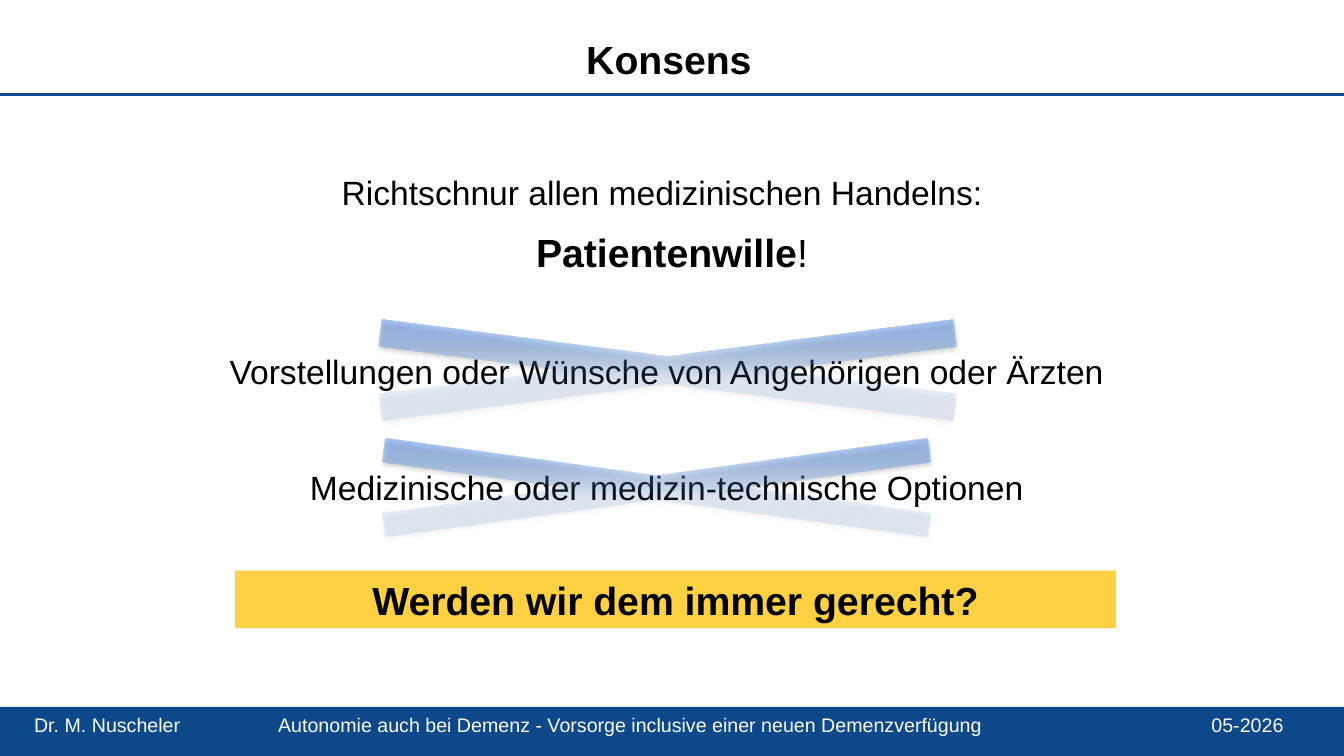
from dataclasses import dataclass

from lxml.etree import SubElement
from pptx import Presentation
from pptx.dml.color import RGBColor
from pptx.enum.shapes import MSO_CONNECTOR, MSO_SHAPE
from pptx.enum.text import MSO_ANCHOR, PP_ALIGN
from pptx.oxml import parse_xml
from pptx.oxml.ns import nsdecls, qn
from pptx.util import Cm, Pt

BLUE = RGBColor(0x0C, 0x48, 0x8A)
YELLOW = RGBColor(0xFF, 0xC0, 0x00)
WHITE = RGBColor(0xFF, 0xFF, 0xFF)
BLACK = RGBColor(0, 0, 0)
CROSS_DARK = RGBColor(0x3F, 0x80, 0xCE)
CROSS_LIGHT = RGBColor(0xA4, 0xC4, 0xFF)
FONT = "Arial"
WIDTH, HEIGHT = 33.87, 19.05


@dataclass
class Box:
    """Position and size in centimetres."""
    left: float
    top: float
    width: float
    height: float

    def lengths(self) -> tuple:
        return Cm(self.left), Cm(self.top), Cm(self.width), Cm(self.height)


@dataclass
class Cross:
    box: Box
    thickness: float


@dataclass
class Line:
    text: str
    size: int = 24
    bold: bool = False
    before: float = 6
    tail: str = ""


CROSSES = [
    Cross(Box(2.92, 7.52, 27.81, 3.61), 0.193),
    Cross(Box(3.35, 10.49, 26.39, 3.58), 0.17),
]
GAP = 48
BODY = [
    Line("Richtschnur allen medizinischen Handelns: ", before=0),
    Line(" Patientenwille", size=28, bold=True, tail="!"),
    Line("Vorstellungen oder Wünsche von Angehörigen oder Ärzten", before=GAP),
    Line("Medizinische oder medizin-technische Optionen", before=GAP),
]
FOOTER = ["Dr. M. Nuscheler",
          "Autonomie auch bei Demenz - Vorsorge inclusive einer neuen Demenzverfügung",
          "05-2026"]
FOOTER_TABS = [6.15, 29.67]


def add_text(p, text: str, *, size: float, bold: bool = False,
             color: RGBColor = BLACK) -> None:
    r = p.add_run()
    r.text = text
    r.font.name = FONT
    r.font.size = Pt(size)
    r.font.bold = bold
    r.font.color.rgb = color


def add_panel(s, box: Box, fill: RGBColor | None = None, inset: float = 0.3):
    """Add a plain rectangle, or a text box if there is no fill."""
    if fill is None:
        sp = s.shapes.add_textbox(*box.lengths())
    else:
        sp = s.shapes.add_shape(MSO_SHAPE.RECTANGLE, *box.lengths())
        sp.shadow.inherit = False
        sp.fill.solid()
        sp.fill.fore_color.rgb = fill
        sp.line.fill.background()
    tf = sp.text_frame
    tf.word_wrap = True
    tf.vertical_anchor = MSO_ANCHOR.TOP
    tf.margin_left, tf.margin_right = Cm(inset), Cm(0.3)
    tf.margin_top = tf.margin_bottom = Cm(0.15)
    return sp


def add_lines(sp, lines: list[Line]) -> None:
    tf = sp.text_frame
    for i, line in enumerate(lines):
        p = tf.add_paragraph() if i else tf.paragraphs[0]
        p.alignment = PP_ALIGN.CENTER
        p.space_before, p.space_after = Pt(line.before), Pt(6)
        add_text(p, line.text, size=line.size, bold=line.bold)
        if line.tail:
            add_text(p, line.tail, size=line.size)


def add_cross(s, cross: Cross) -> None:
    """Add a cross that fades towards its foot and casts a soft shadow."""
    sp = s.shapes.add_shape(MSO_SHAPE.MATH_MULTIPLY, *cross.box.lengths())
    sp.adjustments[0] = cross.thickness
    sp.line.fill.background()
    ln = sp.line._ln
    ln.addprevious(parse_xml(
        f'<a:gradFill {nsdecls("a")} rotWithShape="1"><a:gsLst>'
        f'<a:gs pos="45000"><a:srgbClr val="{CROSS_DARK}"><a:alpha val="13000"/></a:srgbClr></a:gs>'
        f'<a:gs pos="100000"><a:srgbClr val="{CROSS_LIGHT}"/></a:gs>'
        '</a:gsLst><a:lin ang="16200000" scaled="0"/></a:gradFill>'))
    ln.addnext(parse_xml(
        f'<a:effectLst {nsdecls("a")}>'
        f'<a:outerShdw blurRad="{Pt(3.1)}" dist="{Pt(1.8)}" dir="5400000" rotWithShape="0">'
        f'<a:srgbClr val="{BLACK}"><a:alpha val="35000"/></a:srgbClr>'
        '</a:outerShdw></a:effectLst>'))


def add_footer(s) -> None:
    sp = add_panel(s, Box(0, 17.81, WIDTH, 1.24), BLUE, inset=0.86)
    p = sp.text_frame.paragraphs[0]
    p.alignment = PP_ALIGN.LEFT
    tabs = SubElement(p._p.get_or_add_pPr(), qn("a:tabLst"))
    for tab in FOOTER_TABS:
        SubElement(tabs, qn("a:tab"), pos=str(Cm(tab)), algn="l")
    add_text(p, "\t".join(FOOTER), size=14, color=WHITE)


def add_rule(s, top: float) -> None:
    rule = s.shapes.add_connector(MSO_CONNECTOR.STRAIGHT, 0, Cm(top), Cm(WIDTH), Cm(top))
    rule.line.color.rgb = BLUE
    rule.line.width = Pt(2.25)
    SubElement(rule._element.spPr, qn("a:effectLst"))


def main() -> None:
    prs = Presentation()
    prs.slide_width, prs.slide_height = Cm(WIDTH), Cm(HEIGHT)
    s = prs.slides.add_slide(prs.slide_layouts[6])
    add_footer(s)
    add_rule(s, 2.39)
    title = add_panel(s, Box(7.52, 0.74, 18.95, 2.16))
    add_lines(title, [Line("Konsens ", size=28, bold=True, before=0)])
    add_lines(add_panel(s, Box(1.19, 4.17, 31.22, 10.21), WHITE), BODY)
    for cross in CROSSES:
        add_cross(s, cross)
    question = add_panel(s, Box(5.92, 14.38, 22.2, 1.45), YELLOW)
    color = question.fill._xPr.find(f'{qn("a:solidFill")}/{qn("a:srgbClr")}')
    SubElement(color, qn("a:alpha"), val="74000")
    add_lines(question, [Line("Werden wir dem immer gerecht?", size=28, bold=True, before=0)])
    prs.save("out.pptx")


if __name__ == "__main__":
    main()
